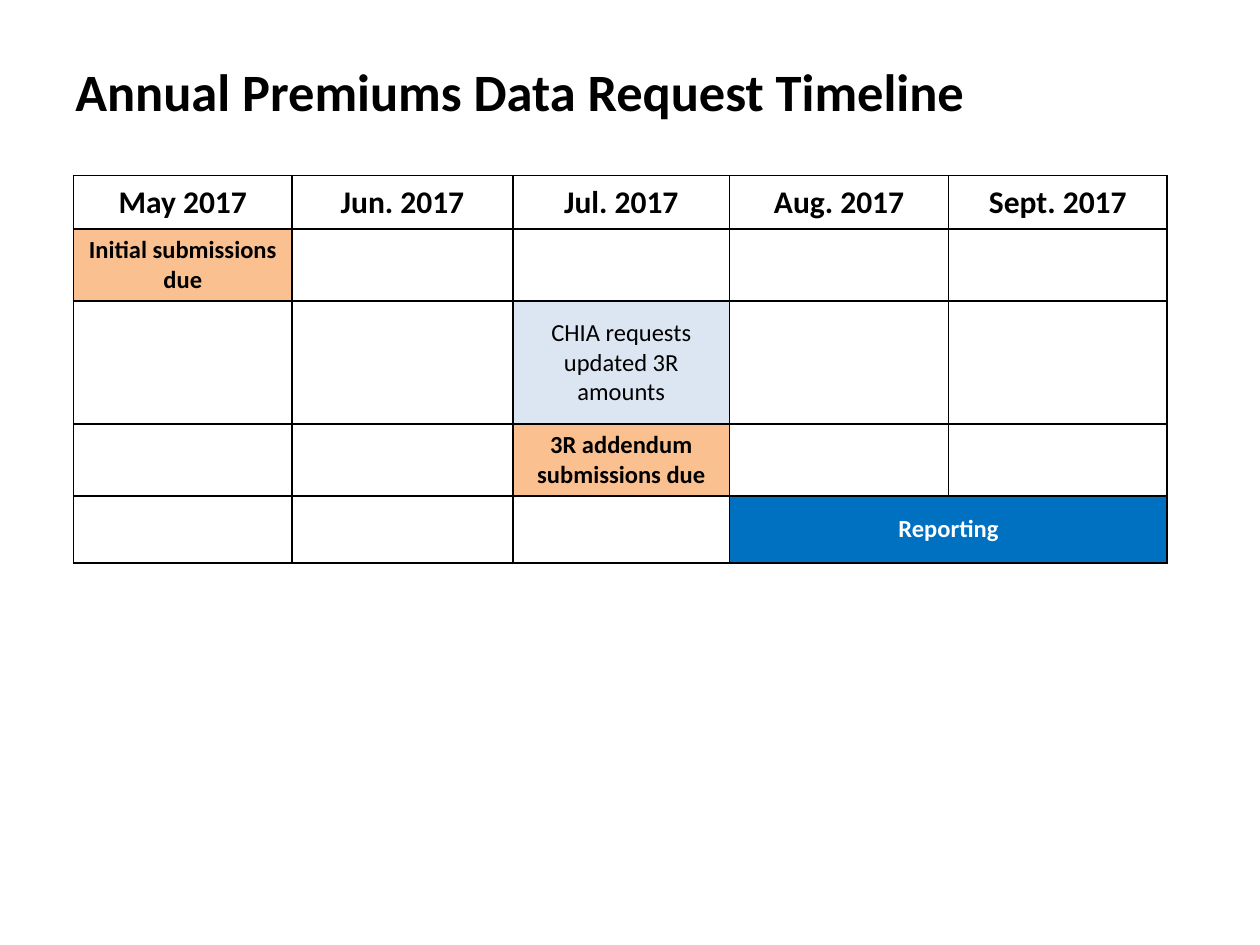
import dataclasses

import lxml.etree
import pptx
import pptx.dml.color
import pptx.enum.text
import pptx.oxml.ns
import pptx.util

Cm = pptx.util.Cm
Pt = pptx.util.Pt


@dataclasses.dataclass(frozen=True)
class Theme:
    """Colours, font and type sizes of the deck."""
    font: str = "Calibri"
    ink: str = "000000"
    paper: str = "FFFFFF"
    due: str = "FAC090"
    request: str = "DCE6F2"
    report: str = "0070C0"
    title_size: int = 30
    month_size: int = 18
    task_size: int = 14
    rule_width: int = 1


@dataclasses.dataclass(frozen=True)
class Task:
    """One coloured bar of the timeline, on its own row."""
    text: str
    month: int
    fill: str
    months: int = 1
    bold: bool = True
    color: str = Theme.ink


THEME = Theme()
MONTHS = ["May 2017", "Jun. 2017", "Jul. 2017", "Aug. 2017", "Sept. 2017"]
TASKS = [
    Task("Initial submissions due", 0, THEME.due),
    Task("CHIA requests updated 3R amounts", 2, THEME.request, bold=False),
    Task("3R addendum submissions due", 2, THEME.due),
    Task("Reporting", 3, THEME.report, months=2, color=THEME.paper),
]
COLUMN_WIDTHS = [4.41, 4.45, 4.37, 4.41, 4.41]
ROW_HEIGHTS = [1.08, 1.45, 2.48, 1.45, 1.35]


def rgb(color):
    """Turn a hex string into a colour."""
    return pptx.dml.color.RGBColor.from_string(color)


def write(frame, text, size, bold=True, color=THEME.ink, align=None):
    """Put one formatted paragraph into a text frame."""
    frame.text = text
    para = frame.paragraphs[0]
    para.alignment = align
    for span in para.runs:
        span.font.name = THEME.font
        span.font.size = Pt(size)
        span.font.bold = bold
        span.font.color.rgb = rgb(color)


def write_cell(cell, text, size, bold=True, color=THEME.ink):
    """Centre a text in a table cell."""
    cell.vertical_anchor = pptx.enum.text.MSO_ANCHOR.MIDDLE
    write(cell.text_frame, text, size, bold, color, pptx.enum.text.PP_ALIGN.CENTER)


def rule_cell(cell):
    """Draw a solid line on all four sides of a cell."""
    properties = cell._tc.get_or_add_tcPr()
    qn = pptx.oxml.ns.qn
    for side in ("a:lnL", "a:lnR", "a:lnT", "a:lnB"):
        line = lxml.etree.SubElement(properties, qn(side), w=str(Pt(THEME.rule_width)))
        fill = lxml.etree.SubElement(line, qn("a:solidFill"))
        lxml.etree.SubElement(fill, qn("a:srgbClr"), val=THEME.ink)


def add_title(page, text, left, top, width, height):
    """Place the slide title in the given box."""
    box = page.shapes.add_textbox(Cm(left), Cm(top), Cm(width), Cm(height))
    box.text_frame.word_wrap = True
    write(box.text_frame, text, THEME.title_size)


def add_timeline(page, left, top):
    """Place the month table, one task to a row, from the given corner."""
    table = page.shapes.add_table(
        len(ROW_HEIGHTS), len(COLUMN_WIDTHS), Cm(left), Cm(top),
        Cm(sum(COLUMN_WIDTHS)), Cm(sum(ROW_HEIGHTS))).table
    table.first_row = False
    table.horz_banding = False
    for column, width in zip(table.columns, COLUMN_WIDTHS):
        column.width = Cm(width)
    for row, height in zip(table.rows, ROW_HEIGHTS):
        row.height = Cm(height)
    for cell in table.iter_cells():
        rule_cell(cell)
        cell.fill.background()
    for index, month in enumerate(MONTHS):
        write_cell(table.cell(0, index), month, THEME.month_size)
    for row, task in enumerate(TASKS, start=1):
        cell = table.cell(row, task.month)
        if task.months > 1:
            cell.merge(table.cell(row, task.month + task.months - 1))
        cell.fill.solid()
        cell.fill.fore_color.rgb = rgb(task.fill)
        write_cell(cell, task.text, THEME.task_size, task.bold, task.color)


def main():
    """Build the deck and save it."""
    deck = pptx.Presentation()
    deck.slide_width = Cm(25.4)
    deck.slide_height = Cm(19.05)
    page = deck.slides.add_slide(deck.slide_layouts[6])
    add_title(page, "Annual Premiums Data Request Timeline", 1.27, 1.07, 21.59, 1.55)
    add_timeline(page, 1.48, 3.54)
    deck.save("out.pptx")


if __name__ == "__main__":
    main()
